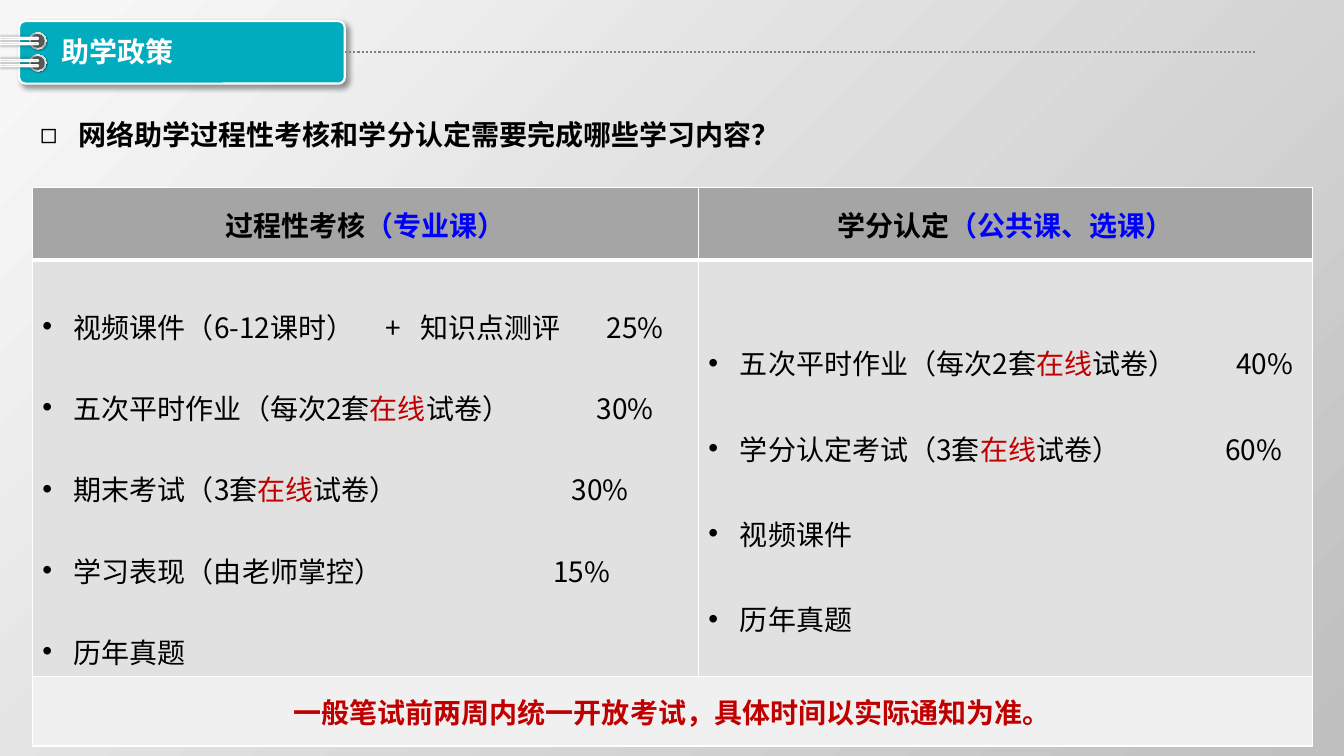
from lxml.etree import SubElement
from pptx import Presentation
from pptx.dml.color import RGBColor
from pptx.enum.dml import MSO_LINE
from pptx.enum.shapes import MSO_CONNECTOR, MSO_SHAPE as SHAPE
from pptx.enum.text import MSO_ANCHOR as ANCHOR, PP_ALIGN as ALIGN
from pptx.oxml.ns import qn
from pptx.util import Pt

FONT = "Noto Sans CJK SC"
COLORS = {
    "white": "FFFFFF", "black": "000000", "teal": "01ACBE", "blue": "0000FF",
    "red": "C00000", "dots": "808080", "hole": "595959",
    "header": "A5A5A5", "body": "E1E1E1", "footer": "F0F0F0",
}
BACKGROUND = [(3, "F7F7F7"), (100, "BFBFBF")]
RING = [(0, "FFFFFF"), (17, "A6A6A6"), (35, "F2F2F2"),
        (55, "A6A6A6"), (75, "F2F2F2"), (100, "A6A6A6")]
ROD = [(0, "808080"), (23, "A6A6A6"), (52, "D9D9D9"), (74, "FFFFFF"), (100, "A6A6A6")]

# Each item: its runs, then its tab stops in points
ONLINE = ("在线", "red")
PROCESS_ITEMS = [
    ([("视频课件（6-12课时）\t+\t知识点测评\t25%", "black")], [245, 270, 403]),
    ([("五次平时作业（每次2套", "black"), ONLINE, ("试卷）\t30%", "black")], [396]),
    ([("期末考试（3套", "black"), ONLINE, ("试卷）\t30%", "black")], [378]),
    ([("学习表现（由老师掌控）\t15%", "black")], [365]),
    ([("历年真题", "black")], []),
]
CREDIT_ITEMS = [
    ([("五次平时作业（每次2套", "black"), ONLINE, ("试卷）\t40%", "black")], [377]),
    ([("学分认定考试（3套", "black"), ONLINE, ("试卷）\t60%", "black")], [369]),
    ([("视频课件", "black")], []),
    ([("历年真题", "black")], []),
]


def rgb(name):
    return RGBColor.from_string(COLORS[name])


def set_gradient(fill, owner, stops, angle):
    fill.gradient()
    fill.gradient_angle = angle
    stop_list = next(owner.iter(qn("a:gsLst")))
    for old in list(stop_list):
        stop_list.remove(old)
    for position, color in stops:
        stop = SubElement(stop_list, qn("a:gs"), pos=str(position * 1000))
        SubElement(stop, qn("a:srgbClr"), val=color)


def add_shadow(shape, blur, distance, angle):
    effects = shape._element.spPr.find(qn("a:effectLst"))
    shadow = SubElement(effects, qn("a:outerShdw"), blurRad=str(Pt(blur)),
                        dist=str(Pt(distance)), dir=str(angle * 60000),
                        algn="tl", rotWithShape="0")
    color = SubElement(shadow, qn("a:srgbClr"), val=COLORS["black"])
    SubElement(color, qn("a:alpha"), val="40000")


def add_plain(slide, kind, left, top, width, height, color=None, line=None):
    shape = slide.shapes.add_shape(kind, Pt(left), Pt(top), Pt(width), Pt(height))
    shape.shadow.inherit = False
    if color:
        shape.fill.solid()
        shape.fill.fore_color.rgb = rgb(color)
    if line:
        shape.line.color.rgb = rgb("white")
        shape.line.width = Pt(line)
    else:
        shape.line.fill.background()
    return shape


def style_run(run, color, bold):
    run.font.size, run.font.bold, run.font.name = Pt(20), bold, FONT
    run.font.color.rgb = rgb(color)
    SubElement(run._r.get_or_add_rPr(), qn("a:ea"), typeface=FONT)


def add_runs(paragraph, parts, bold=True):
    for text, color in parts:
        run = paragraph.add_run()
        run.text = text
        style_run(run, color, bold)


def set_bullet(paragraph, mark, indent, stops=()):
    props = paragraph._p.get_or_add_pPr()
    props.set("marL", str(Pt(indent)))
    props.set("indent", str(-Pt(indent)))
    SubElement(props, qn("a:buFont"), typeface="Arial")
    SubElement(props, qn("a:buChar"), char=mark)
    if stops:
        tabs = SubElement(props, qn("a:tabLst"))
        for stop in stops:
            SubElement(tabs, qn("a:tab"), pos=str(Pt(stop)), algn="l")


def add_ring(slide, left, top):
    """A binder ring with the two rods that hold it."""
    ring = add_plain(slide, SHAPE.OVAL, left, top, 12.2, 12.2)
    set_gradient(ring.fill, ring._element, RING, 45)
    add_shadow(ring, 1, 1, 45)
    add_plain(slide, SHAPE.OVAL, left + 1.1, top + 1.1, 10, 10, "hole")
    for offset in (3.6, 7.4):
        rod = add_plain(slide, SHAPE.ROUNDED_RECTANGLE, 0, top + offset, 27.4, 1.4, line=1)
        rod.adjustments[0] = 0.5
        set_gradient(rod.fill, rod._element, ROD, 0)
        add_shadow(rod, 2, 0, 0)


def add_heading(slide, left, top, width, height):
    # Label and dotted rule
    label = add_plain(slide, SHAPE.ROUNDED_RECTANGLE, left, top, width, height, "teal", 1.5)
    label.adjustments[0] = 0.1
    add_shadow(label, 4, 3, 45)
    middle = Pt(top + height / 2)
    rule = slide.shapes.add_connector(MSO_CONNECTOR.STRAIGHT, Pt(left + width), middle,
                                      Pt(897), middle)
    rule.begin_connect(label, 3)
    rule.line.color.rgb = rgb("dots")
    rule.line.width = Pt(1.5)
    rule.line.dash_style = MSO_LINE.ROUND_DOT
    SubElement(rule._element.spPr, qn("a:effectLst"))
    for ring_top in (top + 8, top + 23.8):
        add_ring(slide, left + 7.2, ring_top)

    # Title, brought in front of the label
    title = slide.shapes.title
    title.left, title.top = Pt(left + 19.4), Pt(top + 1.5)
    title.width, title.height = Pt(240.5), Pt(43.2)
    frame = title.text_frame
    frame.text = "助学政策"
    frame.margin_left = Pt(11)
    frame.vertical_anchor = ANCHOR.MIDDLE
    frame.paragraphs[0].alignment = ALIGN.LEFT
    frame.paragraphs[0].line_spacing = 0.9
    style_run(frame.paragraphs[0].runs[0], "white", True)
    slide.shapes._spTree.append(title._element)


def add_question(slide, left, top, width, height):
    box = slide.shapes.add_textbox(Pt(left), Pt(top), Pt(width), Pt(height))
    box.text_frame.word_wrap = True
    question = box.text_frame.paragraphs[0]
    add_runs(question, [("网络助学过程性考核和学分认定需要完成哪些学习内容？", "black")])
    set_bullet(question, "◻", 27.4)


def style_cell(cell, color, bottom=1):
    cell.vertical_anchor = ANCHOR.MIDDLE
    props = cell._tc.get_or_add_tcPr()
    for side, width in (("lnL", 1), ("lnR", 1), ("lnT", 1), ("lnB", bottom)):
        border = SubElement(props, qn("a:" + side), w=str(Pt(width)))
        SubElement(SubElement(border, qn("a:solidFill")), qn("a:srgbClr"), val=COLORS["white"])
    cell.fill.solid()
    cell.fill.fore_color.rgb = rgb(color)


def fill_centred(cell, parts):
    cell.text_frame.paragraphs[0].alignment = ALIGN.CENTER
    add_runs(cell.text_frame.paragraphs[0], parts)


def fill_list(cell, items, spacing):
    frame = cell.text_frame
    for index, (parts, stops) in enumerate(items):
        item = frame.add_paragraph() if index else frame.paragraphs[0]
        item.line_spacing = spacing
        add_runs(item, parts, bold=False)
        set_bullet(item, "•", 22.5, stops)


def add_requirements(slide, left, top, widths, heights):
    table = slide.shapes.add_table(3, 2, Pt(left), Pt(top), Pt(sum(widths)),
                                   Pt(sum(heights))).table
    for column, width in zip(table.columns, widths):
        column.width = Pt(width)
    for row, height, color in zip(table.rows, heights, ("header", "body", "footer")):
        row.height = Pt(height)
        for cell in row.cells:
            style_cell(cell, color, 3 if color == "header" else 1)
    fill_centred(table.cell(0, 0), [("过程性考核", "black"), ("（专业课）", "blue")])
    fill_centred(table.cell(0, 1), [("学分认定", "black"), ("（公共课、选课）", "blue")])
    fill_list(table.cell(1, 0), PROCESS_ITEMS, 2)
    fill_list(table.cell(1, 1), CREDIT_ITEMS, 2.1)
    table.cell(1, 0).vertical_anchor = ANCHOR.TOP
    table.cell(2, 0).merge(table.cell(2, 1))
    fill_centred(table.cell(2, 0),
                 [("一般笔试前两周内统一开放考试，具体时间以实际通知为准。", "red")])


def main():
    deck = Presentation()
    deck.slide_width, deck.slide_height = Pt(960), Pt(540)
    slide = deck.slides.add_slide(deck.slide_layouts[5])
    set_gradient(slide.background.fill, slide._element, BACKGROUND, 315)
    add_heading(slide, 13.7, 15.1, 232.6, 44.6)
    add_requirements(slide, 23, 133.9, (475.9, 438.5), (51.8, 259.2, 49.7))
    add_question(slide, 21.6, 80.6, 663, 31.7)
    deck.save("out.pptx")


if __name__ == "__main__":
    main()
